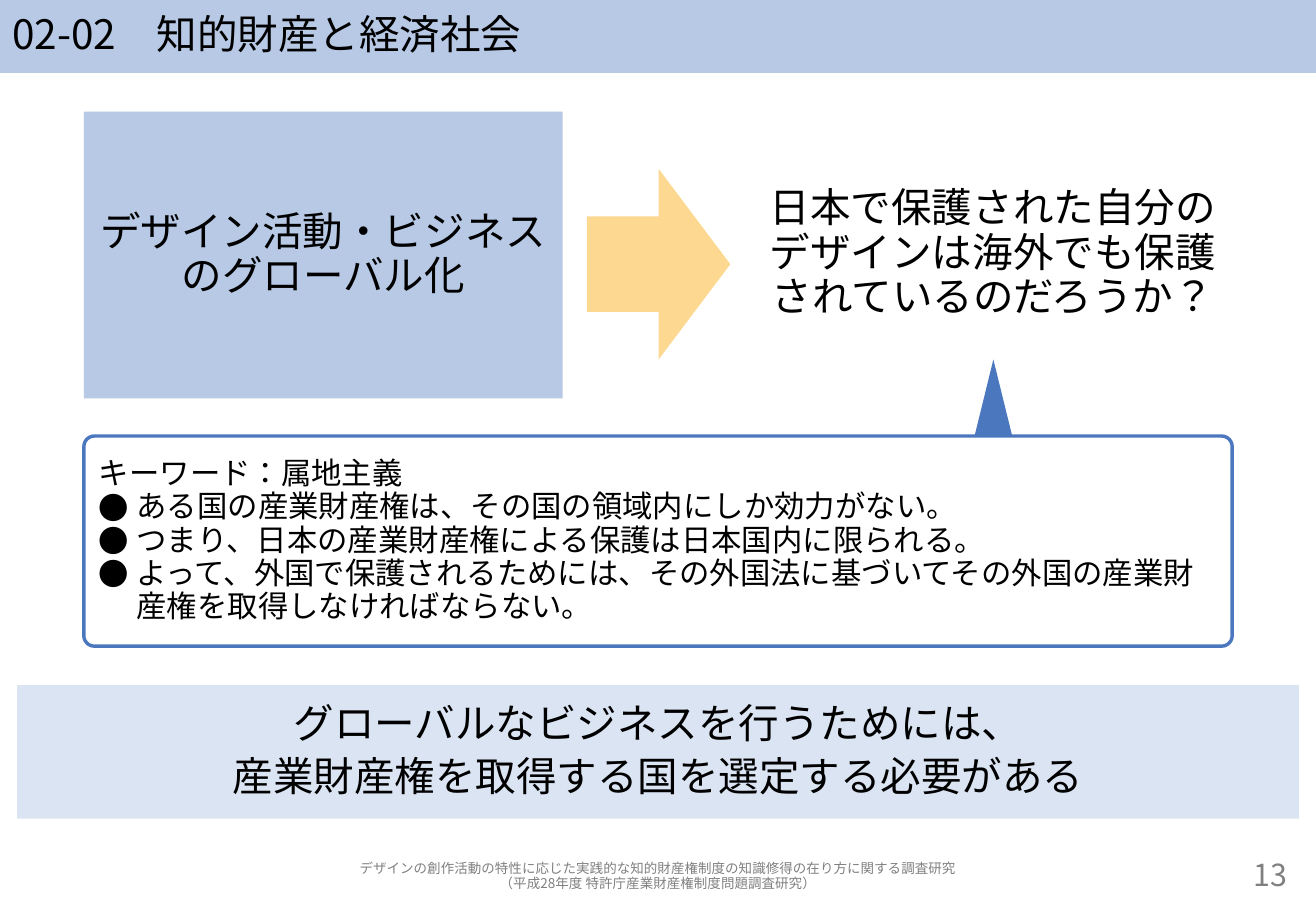
from lxml import etree
from pptx import Presentation
from pptx.dml.color import RGBColor
from pptx.enum import lang, shapes, text
from pptx.oxml import ns
from pptx.util import Inches, Pt

BLACK = RGBColor(0x00, 0x00, 0x00)
GRAY = RGBColor(0x80, 0x80, 0x80)
BLUE = RGBColor(0x4B, 0x77, 0xBE)
MID_BLUE = RGBColor(0xB7, 0xC9, 0xE5)
PALE_BLUE = RGBColor(0xDB, 0xE4, 0xF2)
YELLOW = RGBColor(0xFC, 0xD8, 0x90)

FONT = "Noto Sans CJK JP"
LINE_SPACING = 0.91
BULLET_INDENT = Inches(0.31)
LEFT, CENTER, RIGHT = text.PP_ALIGN.LEFT, text.PP_ALIGN.CENTER, text.PP_ALIGN.RIGHT
SHAPE = shapes.MSO_SHAPE


def add_bullet(para):
    """Give the paragraph a round bullet with a hanging indent."""
    props = para._p.get_or_add_pPr()
    props.set("marL", str(BULLET_INDENT))
    props.set("indent", str(-BULLET_INDENT))
    etree.SubElement(props, ns.qn("a:buFont"), typeface=FONT)
    etree.SubElement(props, ns.qn("a:buChar"), char="●")


def write(box, lines, size=24, color=BLACK, align=CENTER, before=0, bullets_from=None):
    """Fill a box with one paragraph per line, bulleted from the given index."""
    frame = box.text_frame
    frame.word_wrap = True
    frame.auto_size = text.MSO_AUTO_SIZE.NONE
    frame.vertical_anchor = text.MSO_ANCHOR.MIDDLE
    for index, line in enumerate(lines):
        para = frame.paragraphs[0] if index == 0 else frame.add_paragraph()
        para.alignment = align
        para.line_spacing = LINE_SPACING
        para.space_before = Pt(before)
        if bullets_from is not None and index >= bullets_from:
            add_bullet(para)
        span = para.add_run()
        span.text = line
        span.font.size = Pt(size)
        span.font.color.rgb = color
        span.font.name = FONT
        span.font.language_id = lang.MSO_LANGUAGE_ID.JAPANESE
        latin = span._r.rPr.find(ns.qn("a:latin"))
        latin.addnext(latin.makeelement(ns.qn("a:ea"), {"typeface": FONT}))


class SlideBuilder:
    def __init__(self, deck):
        self.page = deck.slides.add_slide(deck.slide_layouts[5])

    def title(self, line, place, fill):
        box = self.page.shapes.title
        box.left, box.top, box.width, box.height = map(Inches, place)
        box.fill.solid()
        box.fill.fore_color.rgb = fill
        write(box, [line], align=LEFT)

    def label(self, lines, place, **style):
        write(self.page.shapes.add_textbox(*map(Inches, place)), lines, **style)

    def shape(self, kind, place, fill=None, line=None, lines=(), **style):
        box = self.page.shapes.add_shape(kind, *map(Inches, place))
        box.shadow.inherit = False
        if fill is None:
            box.fill.background()
        else:
            box.fill.solid()
            box.fill.fore_color.rgb = fill
        if line is None:
            box.line.fill.background()
        else:
            box.line.color.rgb = line
            box.line.width = Pt(2)
        write(box, lines, **style)
        return box


def main():
    deck = Presentation()
    deck.slide_width, deck.slide_height = Inches(10.83), Inches(7.5)
    slide = SlideBuilder(deck)

    slide.title("02-02\u3000知的財産と経済社会".replace("\u3000", "　"), (0, 0, 10.83, 0.6), MID_BLUE)
    slide.label(["13"], (9.35, 7.06, 1.34, 0.31), size=18, color=GRAY, align=RIGHT)

    slide.shape(SHAPE.RECTANGLE, (0.69, 0.92, 3.94, 2.36), fill=MID_BLUE,
                lines=["デザイン活動・ビジネスのグローバル化"])
    slide.label(["日本で保護された自分のデザインは海外でも保護されているのだろうか？"],
                (6.2, 0.91, 3.94, 2.36))
    slide.shape(SHAPE.RIGHT_ARROW, (4.83, 1.39, 1.18, 1.57), fill=YELLOW)

    keyword = slide.shape(
        SHAPE.ROUNDED_RECTANGLE, (0.69, 3.59, 9.45, 1.73), line=BLUE,
        lines=["キーワード：属地主義",
               "ある国の産業財産権は、その国の領域内にしか効力がない。",
               "つまり、日本の産業財産権による保護は日本国内に限られる。",
               "よって、外国で保護されるためには、その外国法に基づいてその外国の産業財産権を取得しなければならない。"],
        size=18, align=LEFT, bullets_from=1)
    keyword.adjustments[0] = 0.05
    slide.shape(SHAPE.ISOSCELES_TRIANGLE, (8.02, 2.96, 0.31, 0.63), fill=BLUE)

    slide.shape(SHAPE.RECTANGLE, (0.14, 5.64, 10.55, 1.1), fill=PALE_BLUE, before=4.8,
                lines=["グローバルなビジネスを行うためには、",
                       "産業財産権を取得する国を選定する必要がある"])
    slide.label(["デザインの創作活動の特性に応じた実践的な知的財産権制度の知識修得の在り方に関する調査研究",
                 "（平成28年度 特許庁産業財産権制度問題調査研究）"],
                (0.14, 7.06, 10.55, 0.31), size=8, color=GRAY)

    deck.save("out.pptx")


if __name__ == "__main__":
    main()
